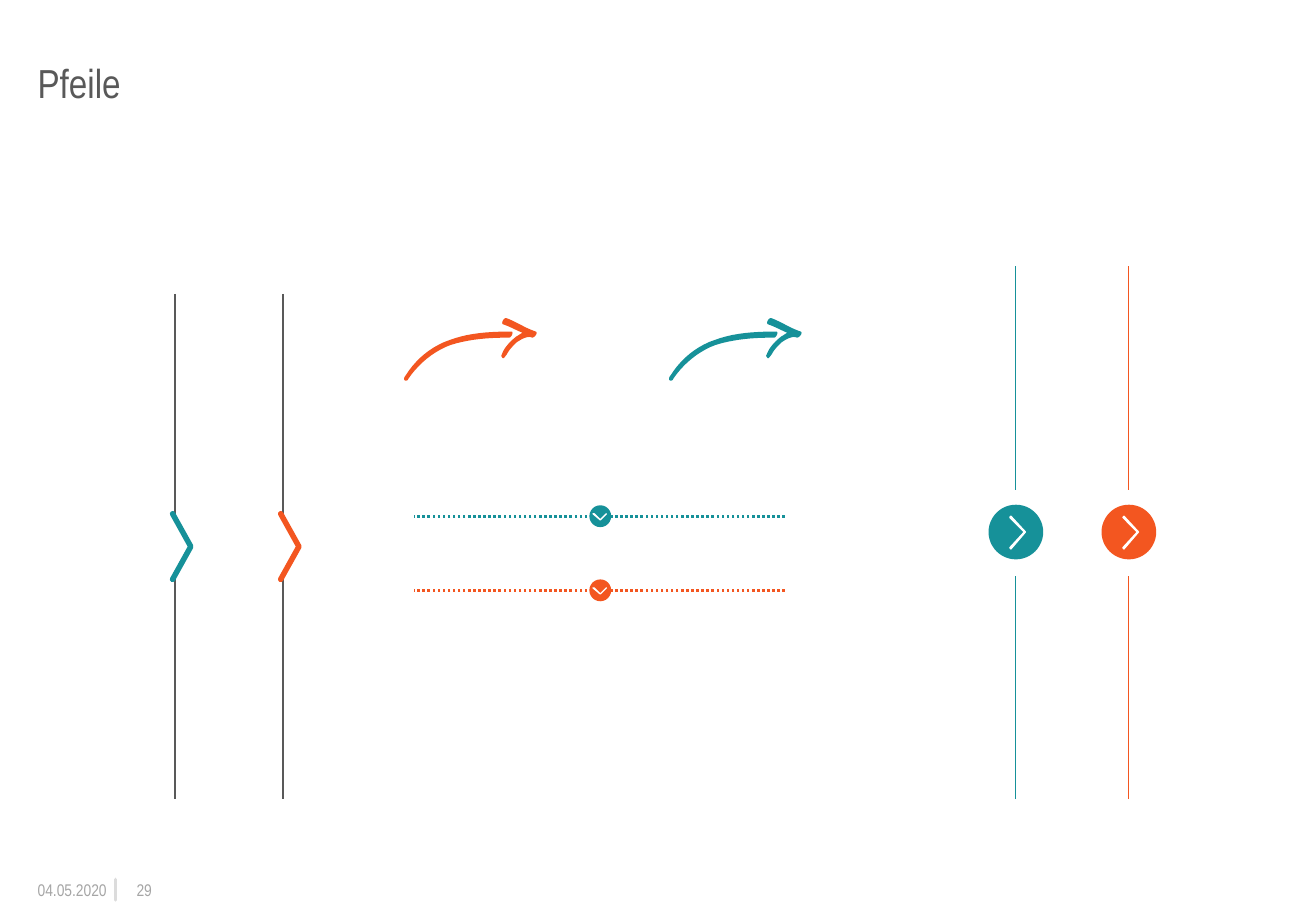
"""Build the slide of arrows, chevrons and dotted dividers."""
from dataclasses import dataclass
from typing import Optional

import lxml.etree
import pptx
import pptx.dml.color
import pptx.enum.dml
import pptx.enum.shapes
import pptx.enum.text
import pptx.oxml.ns
import pptx.shapes.autoshape
import pptx.shapes.shapetree
import pptx.util

Color = pptx.dml.color.RGBColor
Shapes = pptx.shapes.shapetree.SlideShapes
Point = tuple[float, float]
Curve = tuple[int, int, int, int, int, int]

PX = 9144
STEPS = 10
FONT = "Arial Narrow"
TEAL = Color(0x16, 0x91, 0x99)
ORANGE = Color(0xF3, 0x56, 0x20)
DARK = Color(0x59, 0x59, 0x59)
GREY = Color(0xA5, 0xA5, 0xA5)
PALE = Color(0xDC, 0xDC, 0xDC)
WHITE = Color(0xFF, 0xFF, 0xFF)


@dataclass(frozen=True)
class Label:
    """A line of text in its box."""
    text: str
    left: int
    top: int
    width: int
    height: int
    size: int
    color: Color
    align: pptx.enum.text.PP_ALIGN = pptx.enum.text.PP_ALIGN.LEFT
    anchor: pptx.enum.text.MSO_ANCHOR = pptx.enum.text.MSO_ANCHOR.MIDDLE
    space: float = 1.0


@dataclass(frozen=True)
class Mark:
    """A coloured item placed by its x and y."""
    x: int
    y: int
    color: Color


@dataclass(frozen=True)
class Contour:
    """A closed outline of cubic curves."""
    start: tuple[int, int]
    curves: tuple[Curve, ...]


LABELS = (
    Label("Pfeile", 31, 52, 1024, 73, 24, DARK,
          anchor=pptx.enum.text.MSO_ANCHOR.TOP, space=0.9),
    Label("04.05.2020", 31, 724, 57, 17, 10, GREY),
    Label("29", 102, 724, 23, 17, 10, GREY, pptx.enum.text.PP_ALIGN.RIGHT),
)
DISCS = (Mark(836, 438, TEAL), Mark(929, 438, ORANGE))
DOTS = (Mark(494, 425, TEAL), Mark(494, 486, ORANGE))
BARS = (Mark(144, 450, TEAL), Mark(233, 450, ORANGE))
SWEEPS = (Mark(332, 262, ORANGE), Mark(550, 262, TEAL))

RIGHT = ((-5, -12), (7, 0), (-5, 13), (-4, 14), (8, 0), (-4, -13))
DOWN = ((5, -2), (0, 3), (-5, -2), (-6, -2), (0, 3), (5, -2))
WEDGE = ((-2, -27), (13, 0), (-2, 27))
SWEEP = (
    Contour((87, 16), (
        (71, 16, 55, 17, 39, 22), (25, 27, 12, 38, 4, 50),
        (4, 51, 2, 52, 1, 51), (0, 50, 1, 48, 2, 47),
        (10, 34, 23, 23, 38, 18), (54, 12, 71, 11, 89, 11),
        (91, 11, 89, 16, 87, 16))),
    Contour((109, 11), (
        (100, 8, 93, 3, 85, 0), (83, -1, 80, 4, 82, 5),
        (88, 7, 93, 10, 98, 12), (96, 13, 95, 14, 93, 15),
        (88, 19, 83, 24, 81, 30), (80, 31, 81, 32, 82, 33),
        (83, 33, 84, 31, 85, 30), (87, 26, 90, 23, 93, 20),
        (96, 18, 102, 14, 106, 16), (108, 16, 111, 12, 109, 11))),
)


def flat(contour: Contour) -> list[Point]:
    """Return the points along an outline."""
    points: list[Point] = [contour.start]
    for ax, ay, bx, by, cx, cy in contour.curves:
        ox, oy = points[-1]
        for step in range(1, STEPS + 1):
            t = step / STEPS
            u = 1 - t
            points.append((
                u**3 * ox + 3 * u * u * t * ax + 3 * u * t * t * bx + t**3 * cx,
                u**3 * oy + 3 * u * u * t * ay + 3 * u * t * t * by + t**3 * cy))
    return points


def round_cap(shape: pptx.shapes.base.BaseShape) -> None:
    """Give an outlined shape rounded line ends."""
    shape.element.spPr.find(pptx.oxml.ns.qn("a:ln")).set("cap", "rnd")


def add_label(shapes: Shapes, label: Label) -> None:
    """Draw a label."""
    box = shapes.add_textbox(label.left * PX, label.top * PX,
                             label.width * PX, label.height * PX)
    frame = box.text_frame
    frame.margin_left = frame.margin_right = 0
    frame.margin_top = frame.margin_bottom = 0
    frame.word_wrap = False
    frame.vertical_anchor = label.anchor
    para = frame.paragraphs[0]
    para.alignment = label.align
    para.line_spacing = label.space
    run = para.add_run()
    run.text = label.text
    run.font.name = FONT
    run.font.size = pptx.util.Pt(label.size)
    run.font.color.rgb = label.color


def add_line(shapes: Shapes, start: tuple[int, int], end: tuple[int, int],
             color: Color, width: float) -> pptx.shapes.connector.Connector:
    """Draw a straight line."""
    line = shapes.add_connector(
        pptx.enum.shapes.MSO_CONNECTOR.STRAIGHT,
        start[0] * PX, start[1] * PX, end[0] * PX, end[1] * PX)
    line.line.color.rgb = color
    line.line.width = pptx.util.Pt(width)
    lxml.etree.SubElement(line.element.spPr, pptx.oxml.ns.qn("a:effectLst"))
    return line


def paint(shape: pptx.shapes.autoshape.Shape, fill: Color,
          edge: Optional[Color] = None, width: float = 0.75) -> None:
    """Set the fill and the edge of a shape."""
    shape.shadow.inherit = False
    shape.fill.solid()
    shape.fill.fore_color.rgb = fill
    if edge is None:
        shape.line.fill.background()
    else:
        shape.line.color.rgb = edge
        shape.line.width = pptx.util.Pt(width)


def add_form(shapes: Shapes, mark: Mark, rings: list[list[Point]],
             close: bool = True) -> pptx.shapes.autoshape.Shape:
    """Draw outlines around the place of a mark."""
    rings = [[((mark.x + x) * PX, (mark.y + y) * PX) for x, y in ring]
             for ring in rings]
    form = shapes.build_freeform(*rings[0][0], scale=1.0)
    for index, ring in enumerate(rings):
        if index:
            form.move_to(*ring[0])
        form.add_line_segments(ring[1:], close=close)
    return form.convert_to_shape()


def add_badge(shapes: Shapes, mark: Mark, size: int,
              tick: tuple[Point, ...]) -> None:
    """Draw a disc with a white chevron."""
    disc = shapes.add_shape(
        pptx.enum.shapes.MSO_SHAPE.OVAL, mark.x * PX - size * PX // 2,
        mark.y * PX - size * PX // 2, size * PX, size * PX)
    paint(disc, mark.color)
    paint(add_form(shapes, mark, [list(tick)]), WHITE, WHITE)


def main() -> None:
    """Build and save the slide."""
    deck = pptx.Presentation()
    deck.slide_width, deck.slide_height = 1083 * PX, 750 * PX
    shapes = deck.slides.add_slide(deck.slide_layouts[6]).shapes
    round_cap(add_line(shapes, (95, 724), (95, 741), PALE, 2))
    for label in LABELS:
        add_label(shapes, label)
    for mark in DISCS:
        for low, high in ((403, 219), (658, 474)):
            add_line(shapes, (mark.x, low), (mark.x, high), mark.color, 0.75)
        add_badge(shapes, mark, 45, RIGHT)
    for mark in DOTS:
        line = add_line(shapes, (646, mark.y), (341, mark.y), mark.color, 1.5)
        line.line.dash_style = pptx.enum.dml.MSO_LINE.ROUND_DOT
        add_badge(shapes, mark, 18, DOWN)
    for mark in BARS:
        add_line(shapes, (mark.x, 242), (mark.x, 658), DARK, 1)
        wedge = add_form(shapes, mark, [list(WEDGE)], close=False)
        paint(wedge, WHITE, mark.color, 3.25)
        round_cap(wedge)
    for mark in SWEEPS:
        paint(add_form(shapes, mark, [flat(part) for part in SWEEP]), mark.color)
    deck.save("out.pptx")


if __name__ == "__main__":
    main()
